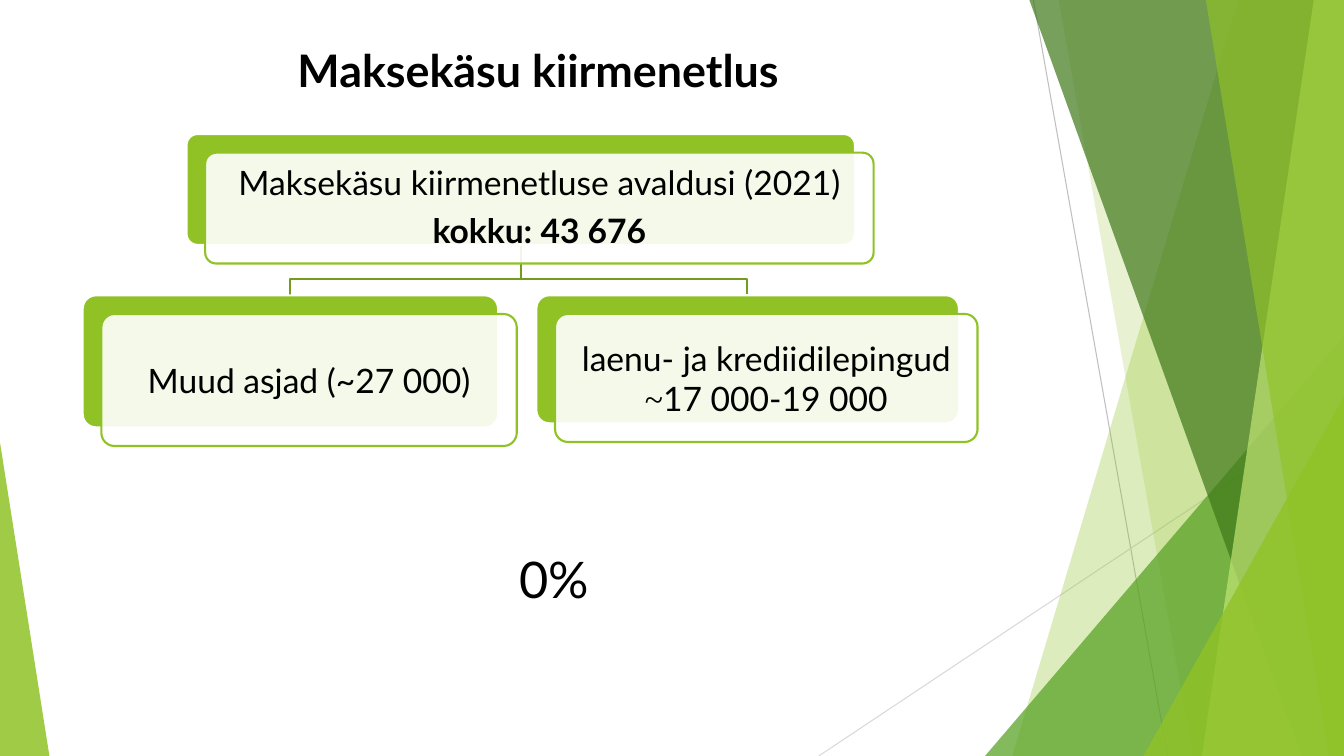
"""Builds the slide on the expedited procedure for payment orders."""
from dataclasses import dataclass

from lxml import etree
from pptx import Presentation, util as u
from pptx.dml.color import RGBColor
from pptx.enum import shapes, text
from pptx.oxml.ns import qn


@dataclass(frozen=True)
class Theme:
    """Colours, fonts and sizes in points."""
    lime: str = "90C226"
    green: str = "54A021"
    forest: str = "3F7819"
    pale: str = "C0E474"
    branch: str = "739B1E"
    white: str = "FFFFFF"
    ink: str = "000000"
    ray: str = "BFBFBF"
    faint_ray: str = "D9D9D9"
    font: str = "Lato"
    tilde_font: str = "Times New Roman"
    title: int = 32
    body: int = 24
    share: int = 36
    hairline: float = 0.75
    outline: float = 1.5


class SlideBuilder:
    """Draws on one slide in a grid of 75 rows with square cells."""
    ROWS = 75
    COLUMNS = 133.33

    def __init__(self, deck, theme):
        """Add a blank slide and fix the size of a grid cell."""
        self.theme = theme
        self.cell = deck.slide_height / self.ROWS
        self.slide = deck.slides.add_slide(deck.slide_layouts[6])
        self.shapes = self.slide.shapes

    def grid(self, *cells):
        """Turn grid cells into lengths."""
        return [u.Emu(round(n * self.cell)) for n in cells]

    def paint(self, shape, fill=None, opacity=100, line=None):
        """Set fill, opacity and outline, and drop the shadow."""
        shape.shadow.inherit = False
        if fill:
            shape.fill.solid()
            shape.fill.fore_color.rgb = RGBColor.from_string(fill)
            if opacity < 100:
                colour = shape._element.spPr.find(qn("a:solidFill"))[0]
                etree.SubElement(colour, qn("a:alpha"), val=str(opacity * 1000))
        else:
            shape.fill.background()
        if line:
            shape.line.color.rgb = RGBColor.from_string(line)
            shape.line.width = u.Pt(self.theme.outline)
        else:
            shape.line.fill.background()
        return shape

    def ray(self, start, end, colour):
        """Draw a thin straight line."""
        line = self.shapes.add_connector(
            shapes.MSO_CONNECTOR.STRAIGHT, *self.grid(*start, *end))
        line.line.color.rgb = RGBColor.from_string(colour)
        line.line.width = u.Pt(self.theme.hairline)
        etree.SubElement(line._element.spPr, qn("a:effectLst"))

    def outline(self, points, closed=True, **style):
        """Draw a freeform through grid points."""
        first, *rest = [self.grid(*point) for point in points]
        builder = self.shapes.build_freeform(*first)
        builder.add_line_segments(rest, close=closed)
        self.paint(builder.convert_to_shape(), **style)

    def band(self, top, bottom, colour, opacity):
        """Draw a full-height band from a slanted edge to the right side."""
        right = self.COLUMNS
        self.outline([(top, 0), (right, 0), (right, self.ROWS), (bottom, self.ROWS)],
                     fill=colour, opacity=opacity)

    def preset(self, kind, box, adjust, **style):
        """Draw an adjusted preset shape."""
        shape = self.shapes.add_shape(kind, *self.grid(*box))
        shape.adjustments[0] = adjust
        return self.paint(shape, **style)

    def wedge(self, left, top, width, apex, colour, opacity):
        """Draw a triangle that stands on the bottom edge."""
        self.preset(shapes.MSO_SHAPE.ISOSCELES_TRIANGLE,
                    (left, top, width, self.ROWS - top), apex,
                    fill=colour, opacity=opacity)

    def set_words(self, frame, words, size, align, bold=False):
        """Fill a text frame and style its runs."""
        frame.word_wrap = True
        frame.text = words
        for paragraph in frame.paragraphs:
            paragraph.alignment = align
            for run in paragraph.runs:
                self.style_run(run, size, bold)
        return frame

    def style_run(self, run, size, bold=False, font=None):
        """Set the font of one run."""
        run.font.name = font or self.theme.font
        run.font.size = u.Pt(size)
        run.font.bold = bold
        run.font.color.rgb = RGBColor.from_string(self.theme.ink)

    def label(self, box, words, size, align, bold=False):
        """Add a text box that grows with its text."""
        frame = self.shapes.add_textbox(*self.grid(*box)).text_frame
        self.set_words(frame, words, size, align, bold)
        frame.auto_size = text.MSO_AUTO_SIZE.SHAPE_TO_FIT_TEXT

    def card(self, left, top, width, height, words):
        """Draw a green plate with an offset translucent text panel."""
        theme, offset, rounded = self.theme, 1.85, shapes.MSO_SHAPE.ROUNDED_RECTANGLE
        self.preset(rounded, (left, top, width, height), 0.1,
                    fill=theme.lime, line=theme.white)
        panel = self.preset(rounded, (left + offset, top + offset, width, height), 0.1,
                            fill=theme.white, opacity=90, line=theme.lime)
        frame = self.set_words(panel.text_frame, words, theme.body, text.PP_ALIGN.CENTER)
        frame.vertical_anchor = text.MSO_ANCHOR.MIDDLE
        frame.margin_left = frame.margin_right = u.Inches(0.1)
        frame.margin_top = frame.margin_bottom = u.Inches(0.1)
        return frame


def draw_backdrop(page):
    """Draw the green facets at both sides."""
    theme, right, bottom = page.theme, page.COLUMNS, page.ROWS
    page.ray((102.5, 0), (115.8, bottom), theme.ray)
    page.ray((right, 40.3), (81.2, bottom), theme.faint_ray)
    page.band(122.8, 100.4, theme.lime, 30)
    page.band(105, 118.3, theme.lime, 20)
    page.wedge(97.7, 33.3, right - 97.7, 1, theme.green, 72)
    page.band(102.1, 129.1, theme.forest, 70)
    page.band(130.3, 119.2, theme.pale, 70)
    page.band(119.6, 131.8, theme.lime, 65)
    page.wedge(113.4, 39.3, right - 113.4, 1, theme.lime, 80)
    page.wedge(0, 43.9, 4.9, 0, theme.lime, 85)


def draw_hierarchy(page):
    """Draw the total and its two parts."""
    theme = page.theme
    root_x, root_bottom, bend, parts_top = 51.65, 24.3, 27.7, 29.3
    for part_x in (74.1, 28.8):
        page.outline([(root_x, root_bottom), (root_x, bend),
                      (part_x, bend), (part_x, parts_top)],
                     closed=False, line=theme.branch)

    total = page.card(18.5, 13.3, 66.3, 11,
                      "Maksekäsu kiirmenetluse avaldusi (2021)\nkokku: 43 676")
    for paragraph in total.paragraphs:
        paragraph.line_spacing = 0.9
        paragraph.space_after = u.Pt(0.35 * theme.body)
    total.paragraphs[1].runs[0].font.bold = True

    page.card(8.2, parts_top, 41.2, 13.1, "Muud asjad (~27 000)")

    loans = page.card(53.2, parts_top, 41.9, 12.7, "laenu- ja krediidilepingud\n~")
    amount = loans.paragraphs[1]
    page.style_run(amount.runs[0], theme.body, font=theme.tilde_font)
    loan_range = amount.add_run()
    loan_range.text = "17 000-19 000"
    page.style_run(loan_range, theme.body)


def main():
    """Build and save the deck."""
    deck = Presentation()
    deck.slide_width, deck.slide_height = u.Inches(13.33), u.Inches(7.5)
    theme = Theme()
    page = SlideBuilder(deck, theme)
    draw_backdrop(page)
    page.label((9.8, 3.7, 87.2, 6.4), "Maksekäsu kiirmenetlus",
               theme.title, text.PP_ALIGN.CENTER, bold=True)
    draw_hierarchy(page)
    page.label((50.5, 53.9, 25.1, 7.1), "0%", theme.share, text.PP_ALIGN.LEFT)
    deck.save("out.pptx")


if __name__ == "__main__":
    main()
